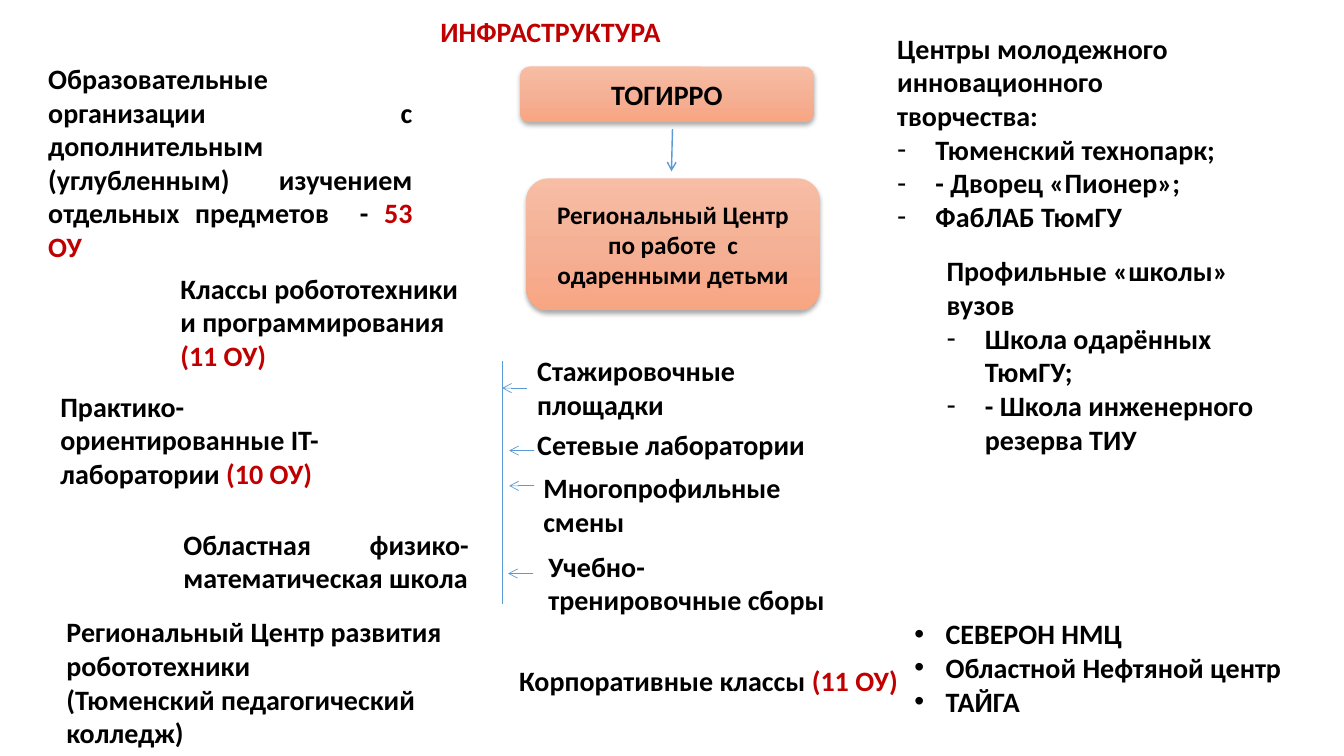
import copy
import pptx
import pptx.util
import pptx.dml.color
import pptx.enum.shapes
import pptx.enum.text
import pptx.oxml
import pptx.oxml.ns

PX = 9144
ALIGN = pptx.enum.text.PP_ALIGN
qn = pptx.oxml.ns.qn
THEME = {
    "font": "Calibri",
    "size": 20,
    "small": 18,
    "ink": "000000",
    "accent": "C00000",
    "arrow": "5B9BD5",
    "gradient": [(0, "F7BDA5"), (0.5, "F5B196"), (1, "F8A582")],
}


def colour(name):
    return pptx.dml.color.RGBColor.from_string(THEME.get(name, name))


def write(para, text, size="size", align=ALIGN.LEFT):
    plain, _, marked = text.partition("|")
    para.text = plain
    para.alignment = align
    if marked:
        para.add_run().text = marked
    for span in para.runs:
        span.font.name = THEME["font"]
        span.font.size = pptx.util.Pt(THEME[size])
        span.font.bold = True
        span.font.color.rgb = colour("accent" if span.text == marked else "ink")


deck = pptx.Presentation()
deck.slide_width, deck.slide_height = 1333 * PX, 750 * PX
page = deck.slides.add_slide(deck.slide_layouts[6])

blocks = [
    ((169, 264, 298, 111), ["Классы робототехники и программирования |(11 ОУ)"], ALIGN.LEFT),
    ((50, 381, 302, 111), ["Практико-ориентированные IT-лаборатории |(10 ОУ)"], ALIGN.LEFT),
    ((172, 518, 303, 77), ["Областная физико-математическая школа"], ALIGN.JUSTIFY),
    ((56, 605, 460, 145), ["Региональный Центр развития робототехники",
                           "(Тюменский педагогический колледж)"], ALIGN.LEFT),
    ((38, 56, 381, 212), ["Образовательные организации с дополнительным (углубленным) "
                          "изучением отдельных предметов  - |53 ОУ"], ALIGN.JUSTIFY),
    ((523, 419, 291, 44), ["Сетевые лаборатории"], ALIGN.LEFT),
    ((523, 346, 264, 77), ["Стажировочные", "площадки"], ALIGN.LEFT),
    ((529, 462, 280, 77), ["Многопрофильные смены"], ALIGN.LEFT),
    ((534, 540, 301, 77), ["Учебно-тренировочные сборы"], ALIGN.LEFT),
    ((505, 653, 396, 44), ["Корпоративные классы |(11 ОУ)"], ALIGN.LEFT),
    ((427, 13, 515, 40), ["|ИНФРАСТРУКТУРА"], ALIGN.LEFT),
    ((880, 26, 361, 212), ["Центры молодежного инновационного творчества:",
                           ("-", 38, "Тюменский технопарк;"),
                           ("-", 38, "- Дворец «Пионер»;"),
                           ("-", 38, "ФабЛАБ ТюмГУ")], ALIGN.LEFT),
    ((929, 247, 357, 212), ["Профильные «школы» вузов",
                            ("-", 38, "Школа одарённых ТюмГУ;"),
                            ("-", 38, "- Школа инженерного резерва ТИУ")], ALIGN.LEFT),
    ((897, 607, 421, 111), [("•", 31, "СЕВЕРОН НМЦ"),
                            ("•", 31, "Областной Нефтяной центр"),
                            ("•", 31, "ТАЙГА")], ALIGN.LEFT),
]
for place, lines, align in blocks:
    box = page.shapes.add_textbox(*[value * PX for value in place])
    frame = box.text_frame
    frame.word_wrap = True
    frame.auto_size = pptx.enum.text.MSO_AUTO_SIZE.SHAPE_TO_FIT_TEXT
    for index, line in enumerate(lines):
        para = frame.add_paragraph() if index else frame.paragraphs[0]
        bullet, indent, text = line if isinstance(line, tuple) else (None, 0, line)
        write(para, text, align=align)
        if text.startswith("|"):
            para.line_spacing = 0.9
        if bullet:
            props = para._p.get_or_add_pPr()
            props.set("marL", str(indent * PX))
            props.set("indent", str(-indent * PX))
            props.append(props.makeelement(qn("a:buFont"), {"typeface": "Arial"}))
            props.append(props.makeelement(qn("a:buChar"), {"char": bullet}))

centres = [
    ((516, 66, 291, 55), "ТОГИРРО", "size"),
    ((522, 177, 291, 131), "Региональный Центр по работе  с одаренными детьми", "small"),
]
for place, text, size in centres:
    box = page.shapes.add_shape(pptx.enum.shapes.MSO_SHAPE.ROUNDED_RECTANGLE,
                                *[value * PX for value in place])
    box.line.fill.background()
    box.fill.gradient()
    box.fill.gradient_angle = 270
    stops = box._element.spPr.find(qn("a:gradFill")).find(qn("a:gsLst"))
    stops.insert(1, copy.deepcopy(stops[0]))
    for stop, (position, shade) in zip(box.fill.gradient_stops, THEME["gradient"]):
        stop.position = position
        stop.color.rgb = colour(shade)
    box.shadow.inherit = False
    box._element.spPr.find(qn("a:effectLst")).append(pptx.oxml.parse_xml(
        f'<a:outerShdw {pptx.oxml.ns.nsdecls("a")} blurRad="44450" dist="27940" '
        'dir="5400000" algn="ctr" rotWithShape="0"><a:srgbClr val="000000">'
        '<a:alpha val="32000"/></a:srgbClr></a:outerShdw>'))
    frame = box.text_frame
    frame.word_wrap = True
    frame.vertical_anchor = pptx.enum.text.MSO_ANCHOR.MIDDLE
    write(frame.paragraphs[0], text, size, ALIGN.CENTER)

links = [((667, 128, 666, 170), 1, True), ((498, 358, 498, 599), 0.5, False)]
for tip, height in [(498, 385), (505, 447), (505, 482), (504, 569)]:
    links.append(((tip + 25, height, tip, height), 0.5, True))
for ends, width, pointed in links:
    link = page.shapes.add_connector(pptx.enum.shapes.MSO_CONNECTOR.STRAIGHT,
                                     *[value * PX for value in ends])
    link.line.color.rgb = colour("arrow")
    link.line.width = pptx.util.Pt(width)
    props = link._element.spPr
    if pointed:
        outline = props.find(qn("a:ln"))
        outline.append(outline.makeelement(qn("a:tailEnd"), {"type": "arrow"}))
    props.append(props.makeelement(qn("a:effectLst"), {}))

deck.save("out.pptx")
